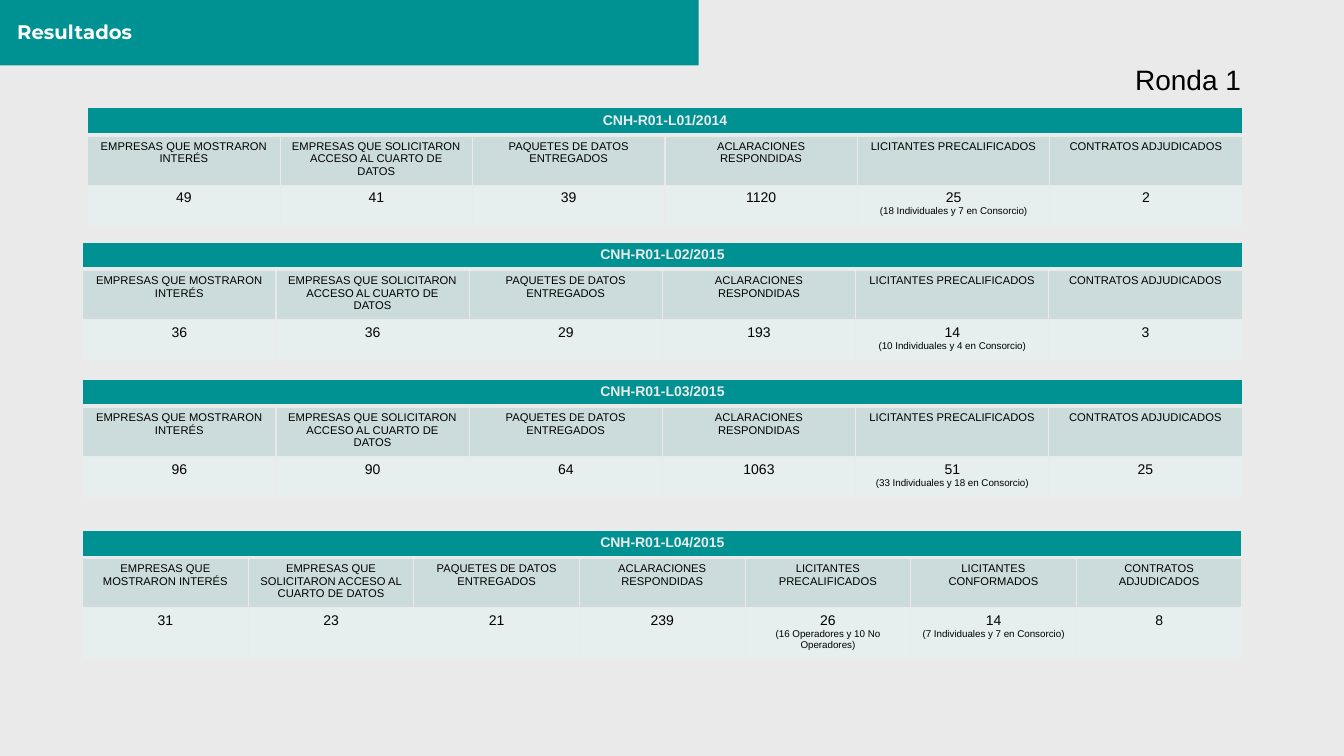
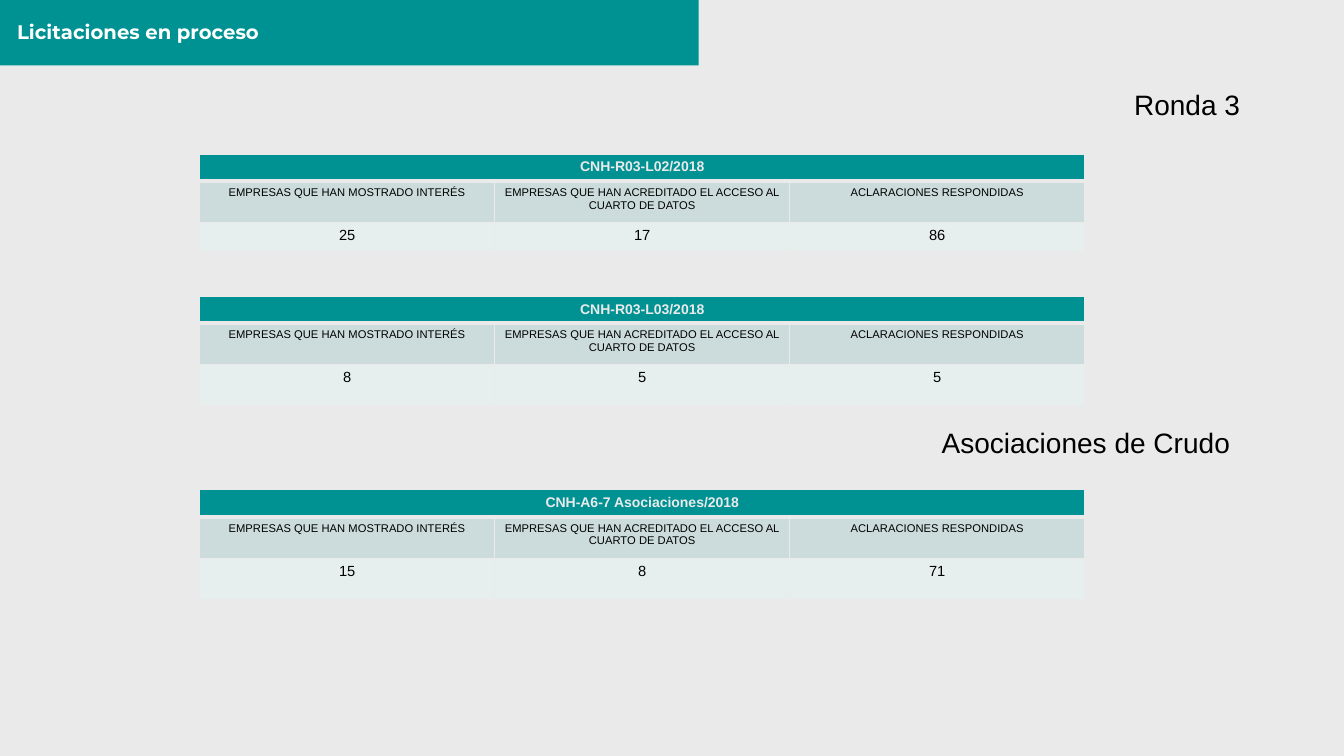
"""Build two slides of bidding-round results as tables under a shared title band."""
from dataclasses import dataclass

import lxml.etree
import pptx
import pptx.dml.color
import pptx.enum.shapes
import pptx.enum.text
import pptx.oxml.ns
import pptx.util

Inches = pptx.util.Inches
ALIGN = pptx.enum.text.PP_ALIGN

COLORS = {
    "background": "EAEAEA",
    "band": "009193",
    "title": "FEFFFF",
    "header": "009192",
    "label": "CCDCDC",
    "value": "E7EEEE",
    "text": "000000",
}
BODY_FONT = "Arial"
TITLE_FONT = "Montserrat"
NOTE_SIZE = 7

ROUND_ONE_LABELS = (
    "EMPRESAS QUE MOSTRARON INTERÉS",
    "EMPRESAS QUE SOLICITARON ACCESO AL CUARTO DE DATOS",
    "PAQUETES DE DATOS ENTREGADOS",
    "ACLARACIONES RESPONDIDAS",
    "LICITANTES PRECALIFICADOS",
    "CONTRATOS ADJUDICADOS",
)
ROUND_ONE_FOUR_LABELS = (
    *ROUND_ONE_LABELS[:5], "LICITANTES CONFORMADOS", ROUND_ONE_LABELS[5])
OPEN_LABELS = (
    "EMPRESAS QUE HAN MOSTRADO INTERÉS",
    "EMPRESAS QUE HAN ACREDITADO EL ACCESO AL CUARTO DE DATOS",
    "ACLARACIONES RESPONDIDAS",
)


@dataclass(frozen=True)
class Style:
    size: float
    color: str = "text"
    bold: bool = False
    font: str = BODY_FONT


@dataclass(frozen=True)
class Caption:
    text: str
    left: float
    top: float
    width: float


@dataclass(frozen=True)
class Tender:
    name: str
    labels: tuple[str, ...]
    values: tuple[str, ...]
    top: float
    left: float = 0.82
    width: float = 11.5
    rows: tuple[float, ...] = (0.27, 0.49, 0.41)
    value_size: float = 10


@dataclass(frozen=True)
class Page:
    title: str
    captions: tuple[Caption, ...]
    tenders: tuple[Tender, ...]


def open_tender(name: str, values: tuple[str, ...], top: float, last_row: float = 0.41) -> Tender:
    return Tender(name, OPEN_LABELS, values, top, 1.98, 8.78, (0.26, 0.41, last_row), 10.5)


PAGES = (
    Page(
        "Resultados",
        (Caption("Ronda 1", 11.16, 0.57, 1.37),),
        (
            Tender("CNH-R01-L01/2014", ROUND_ONE_LABELS,
                   ("49", "41", "39", "1120", "25\n(18 Individuales y 7 en Consorcio)", "2"),
                   1.07, 0.87, 11.45, (0.26, 0.47, 0.41)),
            Tender("CNH-R01-L02/2015", ROUND_ONE_LABELS,
                   ("36", "36", "29", "193", "14\n(10 Individuales y 4 en Consorcio)", "3"), 2.4),
            Tender("CNH-R01-L03/2015", ROUND_ONE_LABELS,
                   ("96", "90", "64", "1063", "51\n(33 Individuales y 18 en Consorcio)", "25"),
                   3.76),
            Tender("CNH-R01-L04/2015", ROUND_ONE_FOUR_LABELS,
                   ("31", "23", "21", "239", "26\n(16 Operadores y 10 No Operadores)",
                    "14\n(7 Individuales y 7 en Consorcio)", "8"),
                   5.26, rows=(0.27, 0.49, 0.49)),
        ),
    ),
    Page(
        "Licitaciones en proceso",
        (
            Caption("Ronda 3", 11.15, 0.82, 1.37),
            Caption("Asociaciones de Crudo", 9.24, 4.17, 3.28),
        ),
        (
            open_tender("CNH-R03-L02/2018", ("25", "17", "86"), 1.53, 0.29),
            open_tender("CNH-R03-L03/2018", ("8", "5", "5"), 2.94),
            open_tender("CNH-A6-7 Asociaciones/2018", ("15", "8", "71"), 4.86),
        ),
    ),
)


def rgb(name: str) -> pptx.dml.color.RGBColor:
    return pptx.dml.color.RGBColor.from_string(COLORS[name])


def add_span(para, text: str, style: Style) -> None:
    span = para.add_run()
    span.text = text
    span.font.name = style.font
    span.font.size = pptx.util.Pt(style.size)
    span.font.bold = style.bold
    span.font.color.rgb = rgb(style.color)


def set_borders(cell, bottom: float) -> None:
    properties = cell._tc.get_or_add_tcPr()
    for side, points in (("L", 1), ("R", 1), ("T", 1), ("B", bottom)):
        line = lxml.etree.SubElement(
            properties, pptx.oxml.ns.qn(f"a:ln{side}"), w=str(pptx.util.Pt(points)))
        fill = lxml.etree.SubElement(line, pptx.oxml.ns.qn("a:solidFill"))
        lxml.etree.SubElement(fill, pptx.oxml.ns.qn("a:srgbClr"), val=COLORS["background"])


def fill_cell(cell, text: str, fill: str, style: Style, bottom: float = 1) -> None:
    set_borders(cell, bottom)
    cell.fill.solid()
    cell.fill.fore_color.rgb = rgb(fill)
    for index, line in enumerate(text.split("\n")):
        para = cell.text_frame.add_paragraph() if index else cell.text_frame.paragraphs[0]
        para.alignment = ALIGN.CENTER
        if line:
            add_span(para, line, Style(NOTE_SIZE) if index else style)


def add_tender(slide, tender: Tender) -> None:
    count = len(tender.labels)
    table = slide.shapes.add_table(
        len(tender.rows), count, Inches(tender.left), Inches(tender.top),
        Inches(tender.width), Inches(sum(tender.rows))).table
    table.horz_banding = False
    for column in table.columns:
        column.width = Inches(tender.width / count)
    for row, height in zip(table.rows, tender.rows):
        row.height = Inches(height)
    table.cell(0, 0).merge(table.cell(0, count - 1))
    header_style = Style(10, "background", True)
    for index, (label, value) in enumerate(zip(tender.labels, tender.values)):
        fill_cell(table.cell(0, index), "" if index else tender.name, "header", header_style, 3)
        fill_cell(table.cell(1, index), label, "label", Style(8))
        fill_cell(table.cell(2, index), value, "value", Style(tender.value_size))


def add_caption(slide, caption: Caption) -> None:
    box = slide.shapes.add_textbox(
        Inches(caption.left), Inches(caption.top), Inches(caption.width), Inches(0.44))
    box.text_frame.word_wrap = True
    add_span(box.text_frame.paragraphs[0], caption.text, Style(20))


def set_title(slide, text: str) -> None:
    title = slide.shapes.title
    title.left, title.top = Inches(0.07), Inches(0.05)
    title.width, title.height = Inches(6.8), Inches(0.55)
    frame = title.text_frame
    frame.auto_size = pptx.enum.text.MSO_AUTO_SIZE.NONE
    frame.vertical_anchor = pptx.enum.text.MSO_ANCHOR.MIDDLE
    para = frame.paragraphs[0]
    para.alignment = ALIGN.LEFT
    para.line_spacing = 0.9
    add_span(para, text, Style(14, "title", True, TITLE_FONT))


def style_layout(layout, slide) -> None:
    layout.background.fill.solid()
    layout.background.fill.fore_color.rgb = rgb("background")
    band = slide.shapes.add_shape(
        pptx.enum.shapes.MSO_SHAPE.RECTANGLE, 0, 0, Inches(6.93), Inches(0.65))
    band.shadow.inherit = False
    band.fill.solid()
    band.fill.fore_color.rgb = rgb("band")
    band.line.fill.background()
    layout.shapes.element.insert(2, band.element)


def main() -> None:
    deck = pptx.Presentation()
    deck.slide_width, deck.slide_height = Inches(13.33), Inches(7.5)
    layout = deck.slide_layouts.get_by_name("Title Only")
    for index, page in enumerate(PAGES):
        slide = deck.slides.add_slide(layout)
        if index == 0:
            style_layout(layout, slide)
        set_title(slide, page.title)
        for caption in page.captions:
            add_caption(slide, caption)
        for tender in page.tenders:
            add_tender(slide, tender)
    deck.save("out.pptx")


if __name__ == "__main__":
    main()
